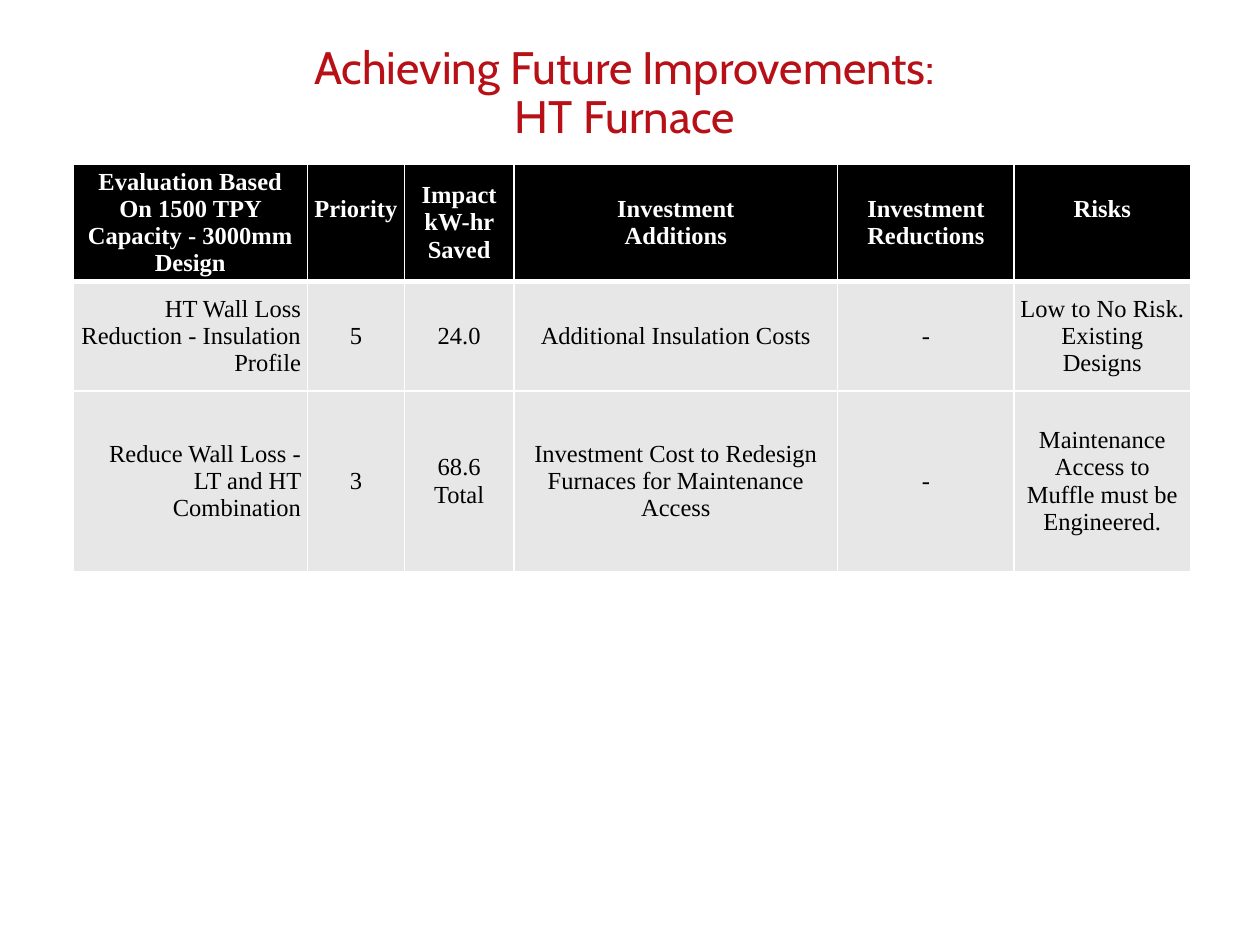
from pptx import Presentation
from pptx.dml.color import RGBColor
from pptx.enum.text import MSO_ANCHOR as Anchor, MSO_AUTO_SIZE as Fit, PP_ALIGN as Align
from pptx.oxml import parse_xml
from pptx.oxml.ns import nsdecls
from pptx.util import Inches, Pt

RED = RGBColor(0xB7, 0x10, 0x17)
BLACK = RGBColor(0, 0, 0)
WHITE = RGBColor(255, 255, 255)
GRAY = RGBColor(0xE7, 0xE7, 0xE7)

TITLE = "Achieving Future Improvements:\nHT Furnace"
HEADS = [
    "Evaluation Based On 1500 TPY Capacity - 3000mm Design",
    "Priority",
    "Impact\nkW-hr Saved",
    "Investment\nAdditions",
    "Investment\nReductions",
    "Risks",
]
ITEMS = [
    ["HT Wall Loss Reduction - Insulation Profile", "5", "24.0",
     "Additional Insulation Costs", "-", "Low to No Risk. Existing Designs"],
    ["Reduce Wall Loss - LT and HT Combination", "3", "68.6 Total",
     "Investment Cost to Redesign Furnaces for Maintenance Access", "-",
     "Maintenance Access to Muffle must be Engineered."],
]
WIDTHS = [1.86, 0.77, 0.87, 2.57, 1.4, 1.4]
HEIGHTS = [0.93, 0.87, 1.43]
RAISED = {"Priority", "Risks"}
LINE = 0.21


def style(par, face, size, color, bold=False, align=Align.CENTER):
    par.alignment = align
    font = par.font
    font.name, font.size, font.bold = face, Pt(size), bold
    font.color.rgb = color


def add_title(slide):
    box = slide.shapes.add_textbox(Inches(2.39), Inches(0.31), Inches(5.14), Inches(0.88))
    frame = box.text_frame
    frame.word_wrap = False
    frame.auto_size = Fit.SHAPE_TO_FIT_TEXT
    frame.text = TITLE
    for par in frame.paragraphs:
        par.line_spacing = 0.9
        style(par, "Cabin", 26, RED)


def add_edges(cell, widths):
    props = cell._tc.get_or_add_tcPr()
    for spot, (side, width) in enumerate(widths.items()):
        props.insert(spot, parse_xml(
            f'<a:ln{side} {nsdecls("a")} w="{Pt(width)}"><a:solidFill>'
            f'<a:srgbClr val="{WHITE}"/></a:solidFill></a:ln{side}>'))


def fill_cell(cell, text, row, col):
    head = row == 0
    cell.text = text
    cell.vertical_anchor = Anchor.MIDDLE
    cell.margin_left = cell.margin_right = Inches(0.05)
    cell.margin_top = 0
    cell.margin_bottom = Inches(LINE if text in RAISED else 0)
    cell.fill.solid()
    cell.fill.fore_color.rgb = BLACK if head else GRAY
    align = Align.RIGHT if col == 0 and not head else Align.CENTER
    for par in cell.text_frame.paragraphs:
        style(par, "Times New Roman", 14, WHITE if head else BLACK, head, align)
    add_edges(cell, {"L": 1, "R": 1, "T": 3 if row == 1 else 1, "B": 3 if head else 1})


def add_grid(slide):
    rows = [HEADS] + ITEMS
    table = slide.shapes.add_table(
        len(rows), len(WIDTHS), Inches(0.58), Inches(1.3),
        Inches(sum(WIDTHS)), Inches(sum(HEIGHTS))).table
    for col, width in zip(table.columns, WIDTHS):
        col.width = Inches(width)
    for row, height in zip(table.rows, HEIGHTS):
        row.height = Inches(height)
    for row, texts in enumerate(rows):
        for col, text in enumerate(texts):
            fill_cell(table.cell(row, col), text, row, col)


def main():
    deck = Presentation()
    deck.slide_width, deck.slide_height = Inches(10), Inches(7.5)
    slide = deck.slides.add_slide(deck.slide_layouts[6])
    add_title(slide)
    add_grid(slide)
    deck.save("out.pptx")


if __name__ == "__main__":
    main()
